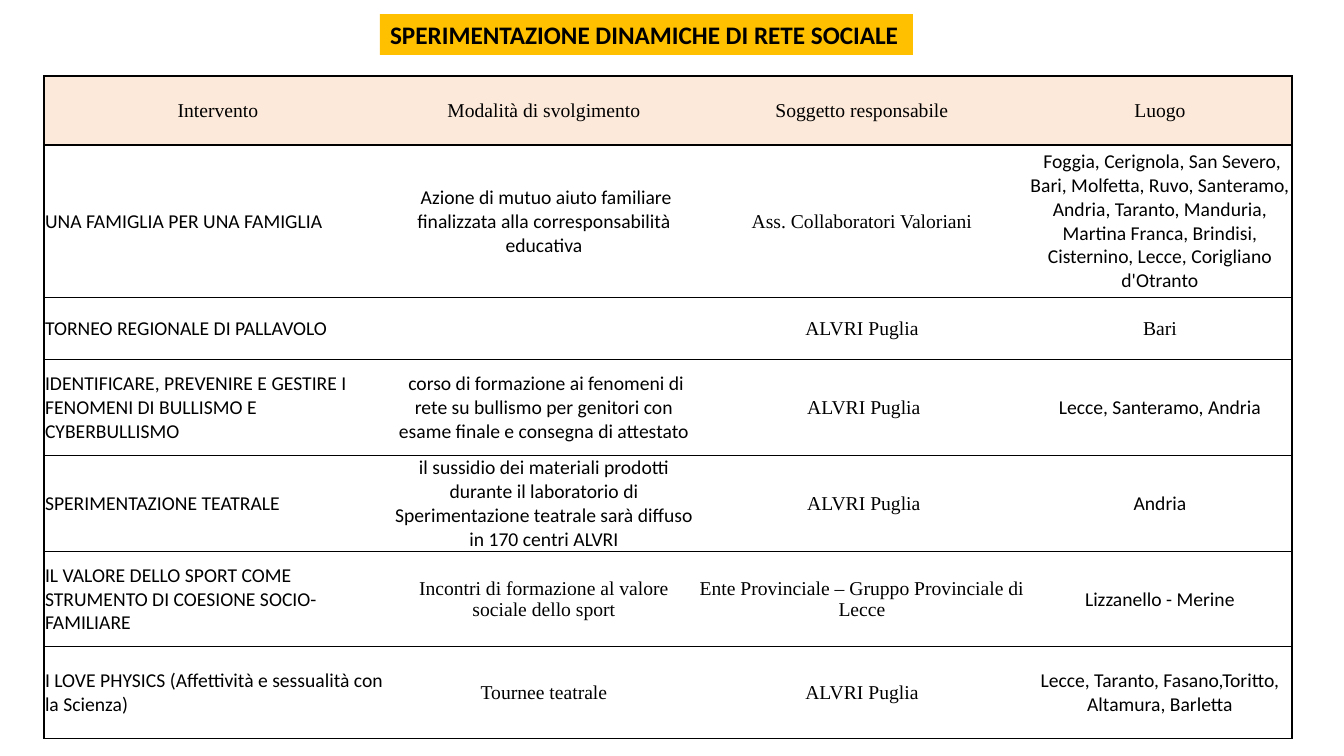
import pptx
import pptx.dml.color
import pptx.enum.text
import pptx.oxml.ns
import pptx.util
from lxml import etree

CALIBRI = "Calibri"
TIMES = "Times New Roman"
BLACK = "000000"
AMBER = "FFC000"
PEACH = "FDE9D9"

TITLE = "SPERIMENTAZIONE DINAMICHE DI RETE SOCIALE"
COLUMN_WIDTHS = [348, 304, 332, 264]
ROW_HEIGHTS = [69, 152, 62, 96, 96, 95, 92]
ROWS = [
    [("Intervento", TIMES), ("Modalità di svolgimento", TIMES),
     ("Soggetto responsabile", TIMES), ("Luogo", TIMES)],
    [("UNA FAMIGLIA PER UNA FAMIGLIA", CALIBRI),
     (" Azione di mutuo aiuto familiare finalizzata alla corresponsabilità educativa", CALIBRI),
     ("Ass. Collaboratori Valoriani", TIMES),
     (" Foggia, Cerignola, San Severo, Bari, Molfetta, Ruvo, Santeramo, Andria, Taranto, "
      "Manduria, Martina Franca, Brindisi, Cisternino, Lecce, Corigliano d'Otranto", CALIBRI)],
    [("TORNEO REGIONALE DI PALLAVOLO", CALIBRI), ("", CALIBRI),
     ("ALVRI Puglia", TIMES), ("Bari", TIMES)],
    [("IDENTIFICARE, PREVENIRE E GESTIRE I FENOMENI DI BULLISMO E CYBERBULLISMO", CALIBRI),
     (" corso di formazione ai fenomeni di rete su bullismo per genitori con esame finale "
      "e consegna di attestato", CALIBRI),
     (" ALVRI Puglia", TIMES), ("Lecce, Santeramo, Andria", CALIBRI)],
    [("SPERIMENTAZIONE TEATRALE", CALIBRI),
     ("il sussidio dei materiali prodotti durante il laboratorio di Sperimentazione teatrale "
      "sarà diffuso in 170 centri ALVRI", CALIBRI),
     (" ALVRI Puglia", TIMES), ("Andria", CALIBRI)],
    [("IL VALORE DELLO SPORT COME STRUMENTO DI COESIONE SOCIO-FAMILIARE", CALIBRI),
     ("Incontri di formazione al valore sociale dello sport", TIMES),
     ("Ente Provinciale – Gruppo Provinciale di Lecce", TIMES),
     ("Lizzanello - Merine", CALIBRI)],
    [("I LOVE PHYSICS (Affettività e sessualità con la Scienza)", CALIBRI),
     ("Tournee teatrale", TIMES), ("ALVRI Puglia", TIMES),
     ("Lecce, Taranto, Fasano,Toritto, Altamura, Barletta", CALIBRI)],
]


def px(length):
    return pptx.util.Emu(round(length * 914400 / 100.8))


def color(value):
    return pptx.dml.color.RGBColor.from_string(value)


def write(text_frame, text, font=CALIBRI, size=14, bold=False, centered=False):
    paragraph = text_frame.paragraphs[0]
    alignment = pptx.enum.text.PP_ALIGN
    paragraph.alignment = alignment.CENTER if centered else alignment.LEFT
    paragraph.font.size = pptx.util.Pt(size)
    if text:
        run = paragraph.add_run()
        run.text = text
        run.font.name = font
        run.font.size = pptx.util.Pt(size)
        run.font.bold = bold
        run.font.color.rgb = color(BLACK)


def set_border(cell, side, width):
    qualified = pptx.oxml.ns.qn
    properties = cell._tc.get_or_add_tcPr()
    line = etree.SubElement(properties, qualified(f"a:ln{side}"))
    line.set("w", str(pptx.util.Pt(width)))
    if width:
        fill = etree.SubElement(line, qualified("a:solidFill"))
        etree.SubElement(fill, qualified("a:srgbClr")).set("val", BLACK)
    else:
        etree.SubElement(line, qualified("a:noFill"))


class SlideBuilder:
    def __init__(self, presentation):
        self.slide = presentation.slides.add_slide(presentation.slide_layouts[5])

    def title(self, text, left, top, width, height):
        shape = self.slide.shapes.title
        shape.left, shape.top = px(left), px(top)
        shape.width, shape.height = px(width), px(height)
        shape.fill.solid()
        shape.fill.fore_color.rgb = color(AMBER)
        text_frame = shape.text_frame
        text_frame.word_wrap = True
        text_frame.auto_size = pptx.enum.text.MSO_AUTO_SIZE.NONE
        text_frame.vertical_anchor = pptx.enum.text.MSO_ANCHOR.TOP
        write(text_frame, text, size=18, bold=True)

    def table(self, rows, left, top, widths, heights):
        frame = self.slide.shapes.add_table(
            len(rows), len(widths), px(left), px(top), px(sum(widths)), px(sum(heights)))
        table = frame.table
        table.first_row = False
        table.horz_banding = False
        for column, width in zip(table.columns, widths):
            column.width = px(width)
        for row, height in zip(table.rows, heights):
            row.height = px(height)
        for row_index, row in enumerate(rows):
            for column_index, (text, font) in enumerate(row):
                self.cell(table, row_index, column_index, text, font)

    def cell(self, table, row, column, text, font):
        cell = table.cell(row, column)
        cell.margin_left = cell.margin_right = cell.margin_top = px(1)
        cell.margin_bottom = 0
        cell.vertical_anchor = pptx.enum.text.MSO_ANCHOR.MIDDLE
        header = row == 0
        set_border(cell, "L", 1 if column == 0 else 0)
        set_border(cell, "R", 1 if column == len(table.columns) - 1 else 0)
        set_border(cell, "T", 1 if row <= 1 else 0.5)
        set_border(cell, "B", 1 if header else 0.5)
        if header:
            cell.fill.solid()
            cell.fill.fore_color.rgb = color(PEACH)
        else:
            cell.fill.background()
        write(cell.text_frame, text, font=font, centered=header or column > 0)


def main():
    presentation = pptx.Presentation()
    presentation.slide_width = px(1344)
    presentation.slide_height = px(756)
    builder = SlideBuilder(presentation)
    builder.title(TITLE, 380, 14, 533, 41)
    builder.table(ROWS, 44, 76, COLUMN_WIDTHS, ROW_HEIGHTS)
    presentation.save("out.pptx")


if __name__ == "__main__":
    main()
